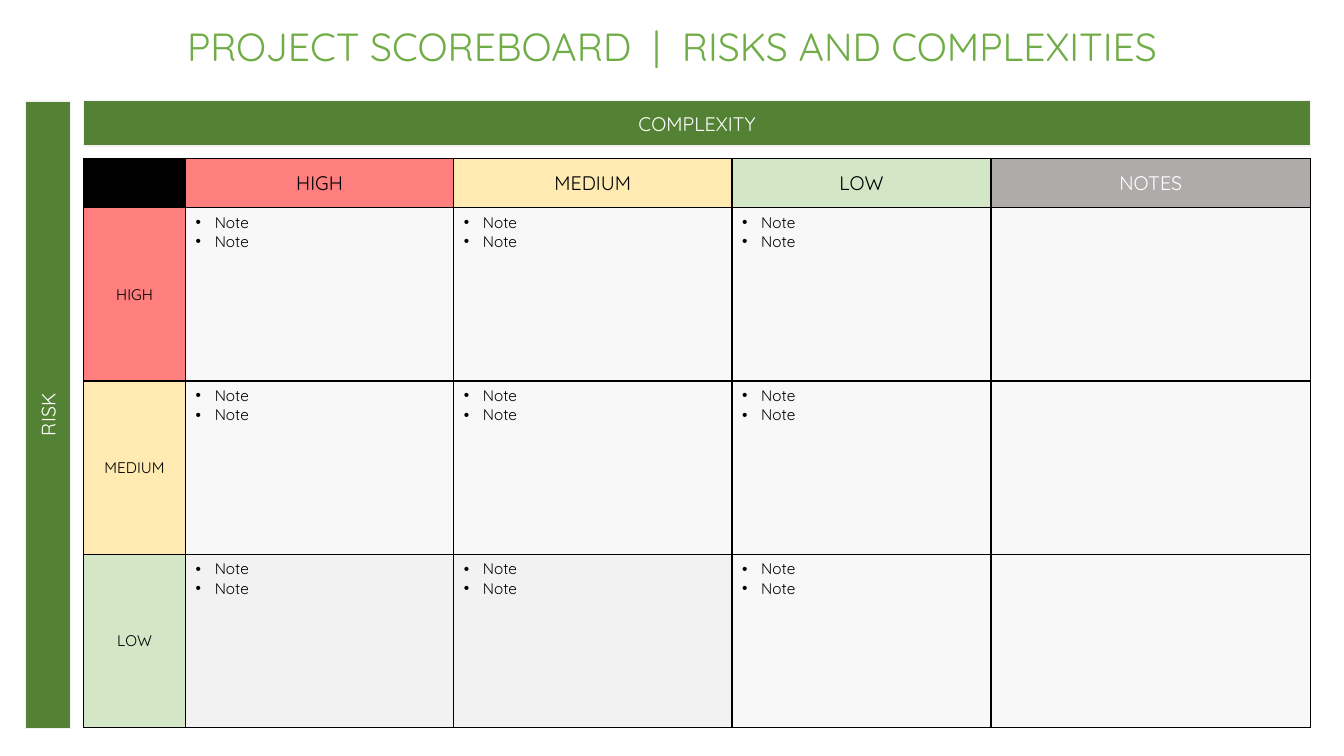
from lxml.etree import SubElement
from pptx import Presentation
from pptx.dml.color import RGBColor
from pptx.enum.shapes import MSO_SHAPE
from pptx.enum.text import MSO_ANCHOR, PP_ALIGN
from pptx.oxml import parse_xml
from pptx.oxml.ns import nsdecls, qn
from pptx.util import Inches, Pt

COLORS = {
    "bar": "548235", "bar_line": "F2F2F2", "title": "70AD47",
    "high": "FF0000", "medium": "FFD966", "low": "A9D18E",
    "notes": "AFABAB", "cell": "F2F2F2", "black": "000000", "white": "FFFFFF",
}
LEVELS = ["HIGH", "MEDIUM", "LOW"]
COLUMN_WIDTHS = [1.01, 2.66, 2.76, 2.57, 3.17]
ROW_HEIGHTS = [0.49, 1.72, 1.72, 1.72]


def style_text(frame, size, color, align=PP_ALIGN.CENTER):
    for para in frame.paragraphs:
        para.alignment = align
        for span in para.runs:
            span.font.name = "Quicksand"
            span.font.size = Pt(size)
            span.font.bold = False
            span.font.color.rgb = RGBColor.from_string(COLORS[color])


def fill_cell(cell, color, opacity):
    cell.fill.solid()
    cell.fill.fore_color.rgb = RGBColor.from_string(COLORS[color])
    properties = cell._tc.get_or_add_tcPr()
    if opacity < 100:
        color_node = properties.find(".//" + qn("a:srgbClr"))
        SubElement(color_node, qn("a:alpha"), val=str(opacity * 1000))
    for position, side in enumerate(["lnL", "lnR", "lnT", "lnB"]):
        properties.insert(position, parse_xml(
            f'<a:{side} {nsdecls("a")} w="12700"><a:solidFill>'
            f'<a:srgbClr val="{COLORS["black"]}"/></a:solidFill></a:{side}>'))


deck = Presentation()
deck.slide_width, deck.slide_height = Inches(13.33), Inches(7.5)
page = deck.slides.add_slide(deck.slide_layouts[6])

# Title
title = page.shapes.add_textbox(Inches(0), Inches(0.17), Inches(13.33), Inches(0.57))
title.text_frame.word_wrap = True
title.text_frame.text = "PROJECT SCOREBOARD  |  RISKS AND COMPLEXITIES"
style_text(title.text_frame, 28, "title")

# Axis bars
for label, left, top, width, rotation in [
    ("COMPLEXITY", 0.83, 1, 12.17, 0),
    ("RISK", -2.64, 3.89, 6.23, 270),
]:
    bar = page.shapes.add_shape(
        MSO_SHAPE.RECTANGLE, Inches(left), Inches(top), Inches(width), Inches(0.45))
    bar.rotation = rotation
    bar.shadow.inherit = False
    bar.fill.solid()
    bar.fill.fore_color.rgb = RGBColor.from_string(COLORS["bar"])
    bar.line.color.rgb = RGBColor.from_string(COLORS["bar_line"])
    bar.line.width = Pt(1)
    bar.text_frame.text = label
    bar.text_frame.vertical_anchor = MSO_ANCHOR.MIDDLE
    style_text(bar.text_frame, 14, "white")

# Matrix
matrix = page.shapes.add_table(
    len(ROW_HEIGHTS), len(COLUMN_WIDTHS), Inches(0.83), Inches(1.57),
    Inches(sum(COLUMN_WIDTHS)), Inches(sum(ROW_HEIGHTS))).table
matrix.first_row = matrix.horz_banding = False
for column, width in zip(matrix.columns, COLUMN_WIDTHS):
    column.width = Inches(width)
for row, height in zip(matrix.rows, ROW_HEIGHTS):
    row.height = Inches(height)

# Heading cells
fill_cell(matrix.cell(0, 0), "black", 100)
headings = [(0, index, level, 14) for index, level in enumerate(LEVELS + ["NOTES"], 1)]
headings += [(index, 0, level, 11) for index, level in enumerate(LEVELS, 1)]
for row_index, column_index, label, size in headings:
    cell = matrix.cell(row_index, column_index)
    is_notes = label == "NOTES"
    cell.text_frame.text = label
    cell.vertical_anchor = MSO_ANCHOR.MIDDLE
    style_text(cell.text_frame, size, "white" if is_notes else "black")
    fill_cell(cell, label.lower(), 100 if is_notes else 50)

# Body cells, with bulleted notes under each complexity level
for row_index in range(1, 4):
    for column_index in range(1, 5):
        cell = matrix.cell(row_index, column_index)
        fill_cell(cell, "cell", 95 if row_index == 3 and column_index < 3 else 50)
        if column_index == 4:
            continue
        cell.text_frame.text = "Note\nNote"
        style_text(cell.text_frame, 11, "black", PP_ALIGN.LEFT)
        for para in cell.text_frame.paragraphs:
            properties = para._p.get_or_add_pPr()
            properties.set("marL", str(Inches(0.19)))
            properties.set("indent", str(Inches(-0.19)))
            bullet_color = SubElement(properties, qn("a:buClr"))
            SubElement(bullet_color, qn("a:srgbClr"), val=COLORS["black"])
            SubElement(properties, qn("a:buFont"), typeface="Arial")
            SubElement(properties, qn("a:buChar"), char="•")

deck.save("out.pptx")
